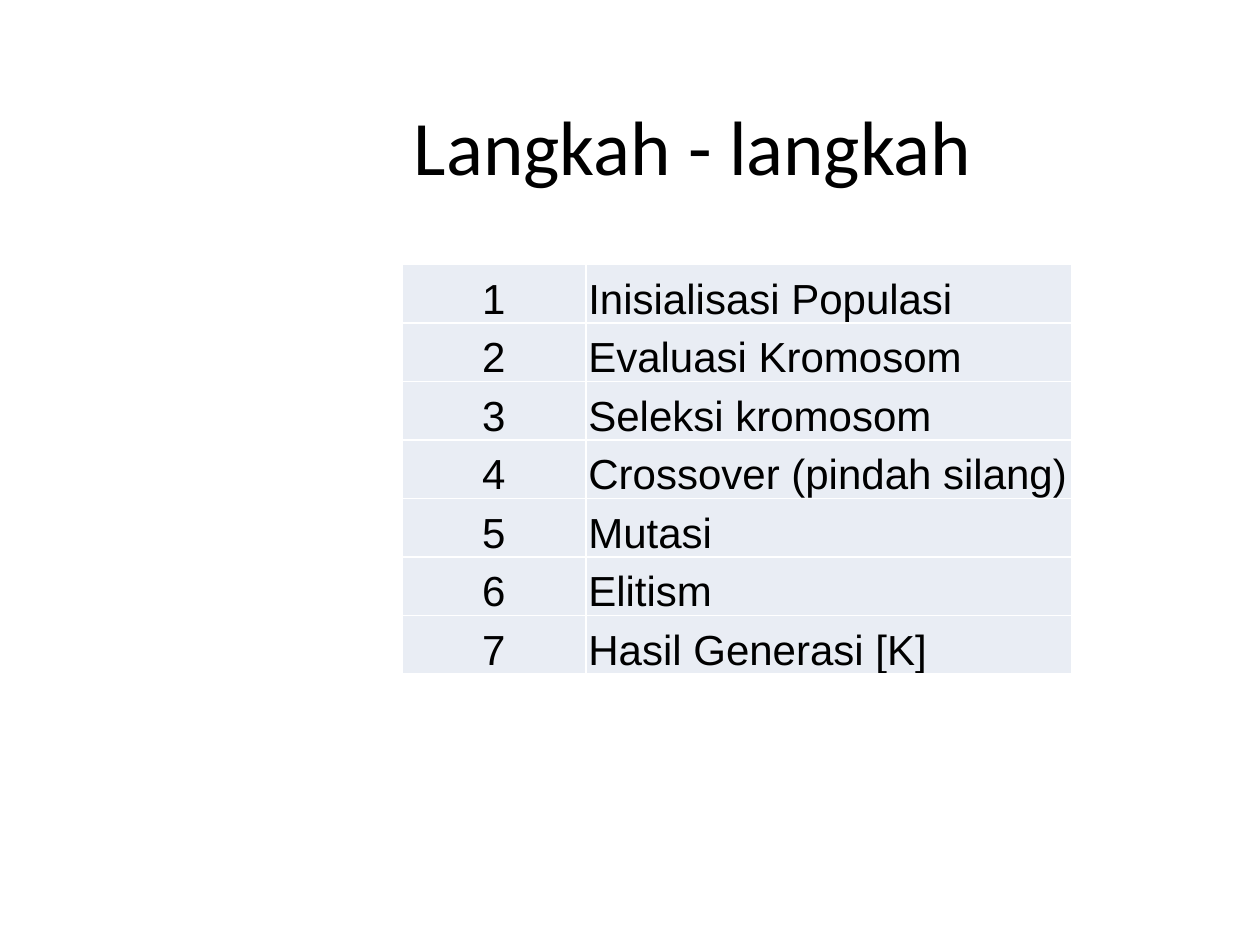
from lxml import etree
from pptx import Presentation
from pptx.dml.color import RGBColor
from pptx.enum.text import MSO_ANCHOR, PP_ALIGN
from pptx.oxml.ns import qn
from pptx.util import Cm, Pt

LEFT, CENTER = PP_ALIGN.LEFT, PP_ALIGN.CENTER
MIDDLE, BOTTOM = MSO_ANCHOR.MIDDLE, MSO_ANCHOR.BOTTOM
BLACK = RGBColor(0x00, 0x00, 0x00)
WHITE = RGBColor(0xFF, 0xFF, 0xFF)
PALE = RGBColor(0xE9, 0xED, 0xF4)

STEPS = [
    "Inisialisasi Populasi",
    "Evaluasi Kromosom",
    "Seleksi kromosom",
    "Crossover (pindah silang)",
    "Mutasi",
    "Elitism",
    "Hasil Generasi [K]",
]


class Deck:
    head_font, body_font = "Calibri", "Arial"
    head_size, body_size = Pt(44), Pt(24)
    inset = Cm(0.05)

    def __init__(self, slide):
        self.slide = slide

    def label(self, frame, text, font, size, align):
        para = frame.paragraphs[0]
        para.alignment = align
        run = para.add_run()
        run.text = text
        run.font.name = font
        run.font.size = size
        run.font.color.rgb = BLACK

    def title(self, text, left, top, width, height):
        box = self.slide.shapes.add_textbox(left, top, width, height)
        frame = box.text_frame
        frame.word_wrap = True
        frame.vertical_anchor = MIDDLE
        self.label(frame, text, self.head_font, self.head_size, CENTER)

    def border(self, cell):
        """Draw a thin white line on all four sides of the cell."""
        props = cell._tc.get_or_add_tcPr()
        for side in ("a:lnL", "a:lnR", "a:lnT", "a:lnB"):
            line = etree.SubElement(props, qn(side), w=str(Pt(1)))
            fill = etree.SubElement(line, qn("a:solidFill"))
            etree.SubElement(fill, qn("a:srgbClr"), val=str(WHITE))

    def cell(self, cell, text, align):
        self.border(cell)
        cell.fill.solid()
        cell.fill.fore_color.rgb = PALE
        cell.margin_left = cell.margin_right = cell.margin_top = self.inset
        cell.margin_bottom = 0
        cell.vertical_anchor = BOTTOM
        self.label(cell.text_frame, text, self.body_font, self.body_size, align)

    def table(self, items, left, top, widths, height):
        """Number the items, one row each."""
        shape = self.slide.shapes.add_table(
            len(items), len(widths), left, top, sum(widths), height * len(items))
        table = shape.table
        table.first_row = table.horz_banding = False
        for col, width in zip(table.columns, widths):
            col.width = width
        for num, (row, item) in enumerate(zip(table.rows, items), 1):
            row.height = height
            self.cell(row.cells[0], str(num), CENTER)
            self.cell(row.cells[1], item, LEFT)


def main():
    prs = Presentation()
    prs.slide_width, prs.slide_height = Cm(25.4), Cm(19.05)
    deck = Deck(prs.slides.add_slide(prs.slide_layouts[6]))
    deck.title("Langkah - langkah", Cm(2.54), Cm(1.32), Cm(22.86), Cm(3.18))
    deck.table(STEPS, Cm(8.1), Cm(5.33), [Cm(3.71), Cm(9.8)], Cm(1.18))
    prs.save("out.pptx")


if __name__ == "__main__":
    main()
